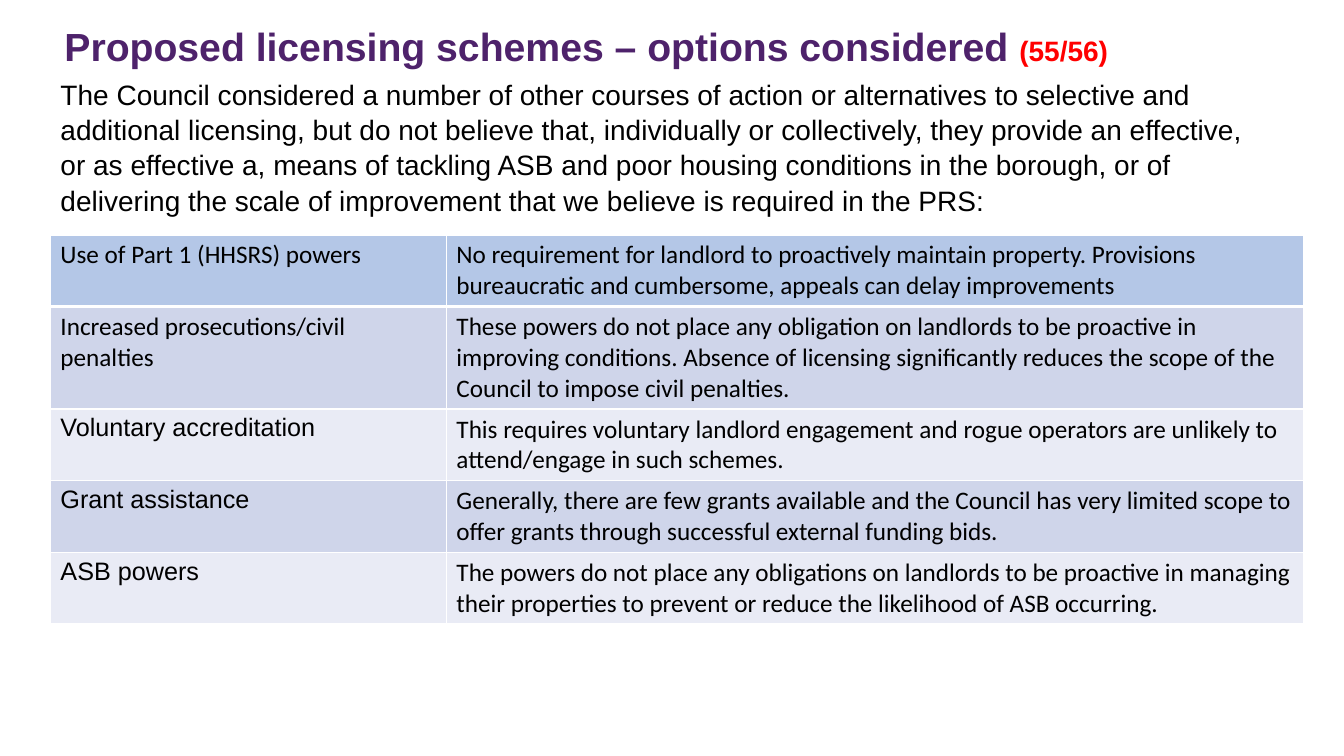
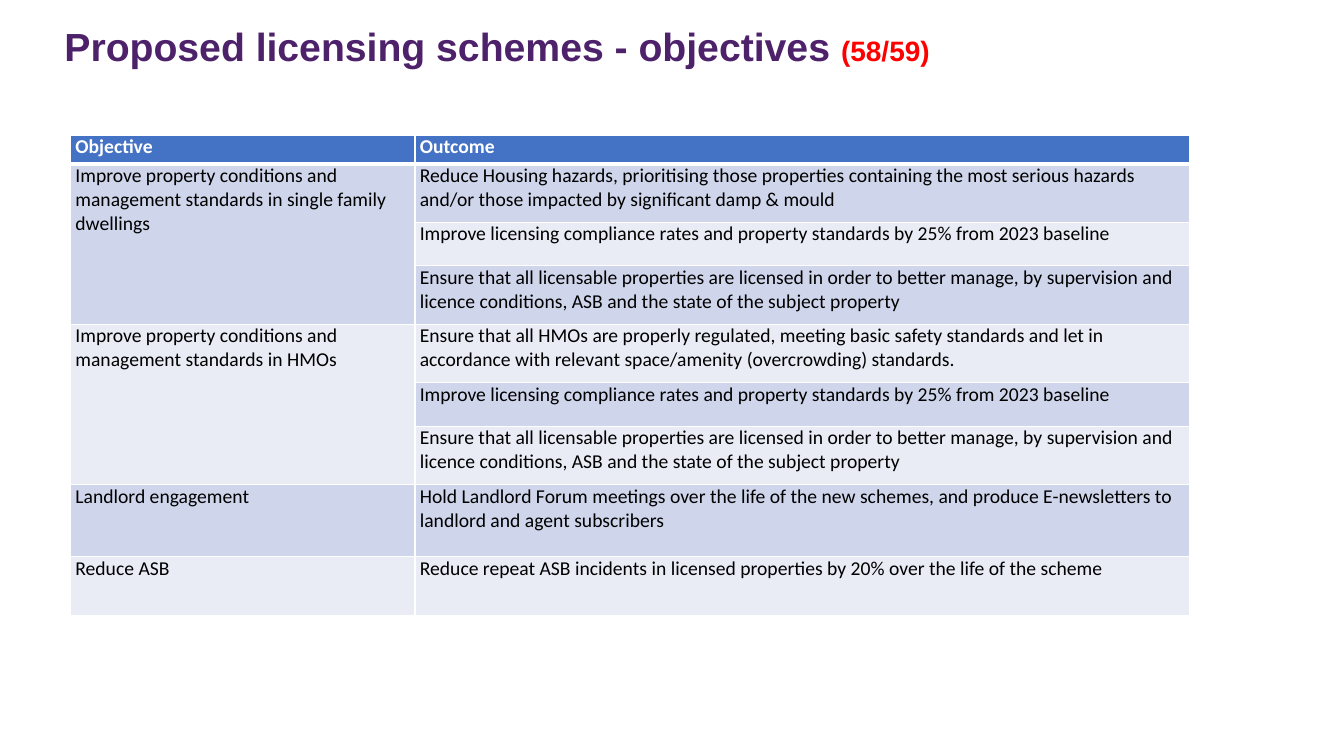
import pptx
import pptx.dml.color
import pptx.enum.text
import pptx.oxml
import pptx.oxml.ns
import pptx.util
from pptx.util import Cm

PURPLE, RED, BLACK, WHITE = "4E226B", "FF0000", "000000", "FFFFFF"
BLUE, PALE_BLUE = "4472C4", "B4C7E7"
BANDS = ("E9EBF5", "CFD5EA")
HEADING_FONT, TABLE_FONT = "Arial", "Calibri"


def color(value):
    return pptx.dml.color.RGBColor.from_string(value)


def apply(target, values):
    for name, value in values.items():
        setattr(target, name, value)


class Deck:
    title_format = {"name": HEADING_FONT, "bold": True}
    body_format = {"name": HEADING_FONT, "size": pptx.util.Pt(20), "bold": False}
    frame_format = {
        "word_wrap": True,
        "auto_size": pptx.enum.text.MSO_AUTO_SIZE.NONE,
        "vertical_anchor": pptx.enum.text.MSO_ANCHOR.TOP,
    }
    left_format = {
        "alignment": pptx.enum.text.PP_ALIGN.LEFT,
        "space_before": pptx.util.Pt(0),
    }

    def __init__(self):
        self.presentation = pptx.Presentation()
        apply(self.presentation, {"slide_width": Cm(33.87), "slide_height": Cm(19.05)})
        self.slide = None

    def add_slide(self, layout_name):
        layout = self.presentation.slide_layouts.get_by_name(layout_name)
        self.slide = self.presentation.slides.add_slide(layout)

    def place(self, shape, left, top, width, height):
        apply(shape, {"left": Cm(left), "top": Cm(top),
                      "width": Cm(width), "height": Cm(height)})
        apply(shape.text_frame, self.frame_format)
        return shape.text_frame.paragraphs[0]

    def add_run(self, paragraph, text, text_color, values):
        run = paragraph.add_run()
        run.text = text
        apply(run.font, values)
        run.font.color.rgb = color(text_color)

    def title(self, text, pages):
        paragraph = self.place(self.slide.shapes.title, 1.37, 0.56, 31, 1.3)
        apply(paragraph, {**self.left_format, "line_spacing": 0.9})
        for words, size, text_color in ((text + " ", 28, PURPLE), (pages, 20, RED)):
            values = {**self.title_format, "size": pptx.util.Pt(size)}
            self.add_run(paragraph, words, text_color, values)

    def body(self, text):
        paragraph = self.place(self.slide.placeholders[1], 1.27, 1.78, 30.43, 3.9)
        properties = paragraph._p.get_or_add_pPr()
        properties.set("marL", "0")
        properties.set("indent", "0")
        properties.append(pptx.oxml.parse_xml(
            f'<a:buNone {pptx.oxml.ns.nsdecls("a")}/>'))
        apply(paragraph, {**self.left_format, "line_spacing": 1.05})
        self.add_run(paragraph, text, BLACK, self.body_format)

    def borders(self, cell, row_index):
        thick_side = {0: "B", 1: "T"}.get(row_index)
        properties = cell._tc.get_or_add_tcPr()
        for side in "LRTB":
            width = pptx.util.Pt(3 if side == thick_side else 1)
            properties.append(pptx.oxml.parse_xml(
                f'<a:ln{side} {pptx.oxml.ns.nsdecls("a")} w="{width}"><a:solidFill>'
                f'<a:srgbClr val="{WHITE}"/></a:solidFill></a:ln{side}>'))

    def table(self, left, top, widths, heights, rows, size, header, margins, label_fonts):
        header_fill, header_color, header_bold = header
        table = self.slide.shapes.add_table(
            len(rows), len(widths), Cm(left), Cm(top),
            Cm(sum(widths)), Cm(sum(heights))).table
        for column, width in zip(table.columns, widths):
            column.width = Cm(width)
        for row_index, (texts, height) in enumerate(zip(rows, heights)):
            table.rows[row_index].height = Cm(height)
            is_header = row_index == 0
            for column_index, text in enumerate(texts):
                cell = table.cell(row_index, column_index)
                self.borders(cell, row_index)
                cell.fill.solid()
                cell.fill.fore_color.rgb = color(
                    header_fill if is_header else BANDS[row_index % 2])
                apply(cell, margins)
                if text:
                    font = TABLE_FONT if column_index else label_fonts.get(
                        row_index, TABLE_FONT)
                    self.add_run(
                        cell.text_frame.paragraphs[0], text,
                        header_color if is_header else BLACK,
                        {"name": font, "size": pptx.util.Pt(size),
                         "bold": is_header and header_bold})
        return table


def options_slide(deck):
    deck.add_slide("Title and Content")
    deck.title("Proposed licensing schemes – options considered", "(55/56)")
    deck.body(
        "The Council considered a number of other courses of action or alternatives to "
        "selective and additional licensing, but do not believe that, individually or "
        "collectively, they provide an effective, or as effective a, means of tackling "
        "ASB and poor housing conditions in the borough, or of delivering the scale of "
        "improvement that we believe is required in the PRS:")
    rows = [
        ("Use of Part 1 (HHSRS) powers",
         "No requirement for landlord to proactively maintain property. Provisions "
         "bureaucratic and cumbersome, appeals can delay improvements"),
        ("Increased prosecutions/civil penalties",
         "These powers do not place any obligation on landlords to be proactive in "
         "improving conditions. Absence of licensing significantly reduces the scope "
         "of the Council to impose civil penalties."),
        ("Voluntary accreditation",
         "This requires voluntary landlord engagement and rogue operators are unlikely "
         "to attend/engage in such schemes."),
        ("Grant assistance",
         "Generally, there are few grants available and the Council has very limited "
         "scope to offer grants through successful external funding bids."),
        ("ASB powers",
         "The powers do not place any obligations on landlords to be proactive in "
         "managing their properties to prevent or reduce the likelihood of ASB occurring."),
    ]
    deck.table(1.27, 5.92, (9.98, 21.59), (1.78, 2.54, 1.78, 1.78, 1.78), rows, 18,
               (PALE_BLUE, BLACK, False), {}, dict.fromkeys((2, 3, 4), HEADING_FONT))


def objectives_slide(deck):
    deck.add_slide("Title Only")
    deck.title("Proposed licensing schemes - objectives", "(58/59)")
    compliance = ("Improve licensing compliance rates and property standards by 25% "
                  "from 2023 baseline")
    licensed = ("Ensure that all licensable properties are licensed in order to better "
                "manage, by supervision and licence conditions, ASB and the state of "
                "the subject property")
    rows = [
        ("Objective", "Outcome"),
        ("Improve property conditions and management standards in single family dwellings",
         "Reduce Housing hazards, prioritising those properties containing the most "
         "serious hazards and/or those impacted by significant damp & mould"),
        ("", compliance),
        ("", licensed),
        ("Improve property conditions and management standards in HMOs",
         "Ensure that all HMOs are properly regulated, meeting basic safety standards and "
         "let in accordance with relevant space/amenity (overcrowding) standards."),
        ("", compliance),
        ("", licensed),
        ("Landlord engagement",
         "Hold Landlord Forum meetings over the life of the new schemes, and produce "
         "E-newsletters to landlord and agent subscribers"),
        ("Reduce ASB",
         "Reduce repeat ASB incidents in licensed properties by 20% over the life of "
         "the scheme"),
    ]
    margins = {"margin_left": Cm(0.12), "margin_right": Cm(0.12),
               "margin_top": Cm(0), "margin_bottom": Cm(0)}
    heights = (0.73, 1.47, 1.1, 1.47, 1.47, 1.1, 1.47, 1.82, 1.47)
    table = deck.table(1.78, 3.4, (8.68, 19.53), heights, rows, 14,
                       (BLUE, WHITE, True), margins, {})
    for first_row in (1, 4):
        table.cell(first_row, 0).merge(table.cell(first_row + 2, 0))


def main():
    deck = Deck()
    options_slide(deck)
    objectives_slide(deck)
    deck.presentation.save("out.pptx")


if __name__ == "__main__":
    main()
